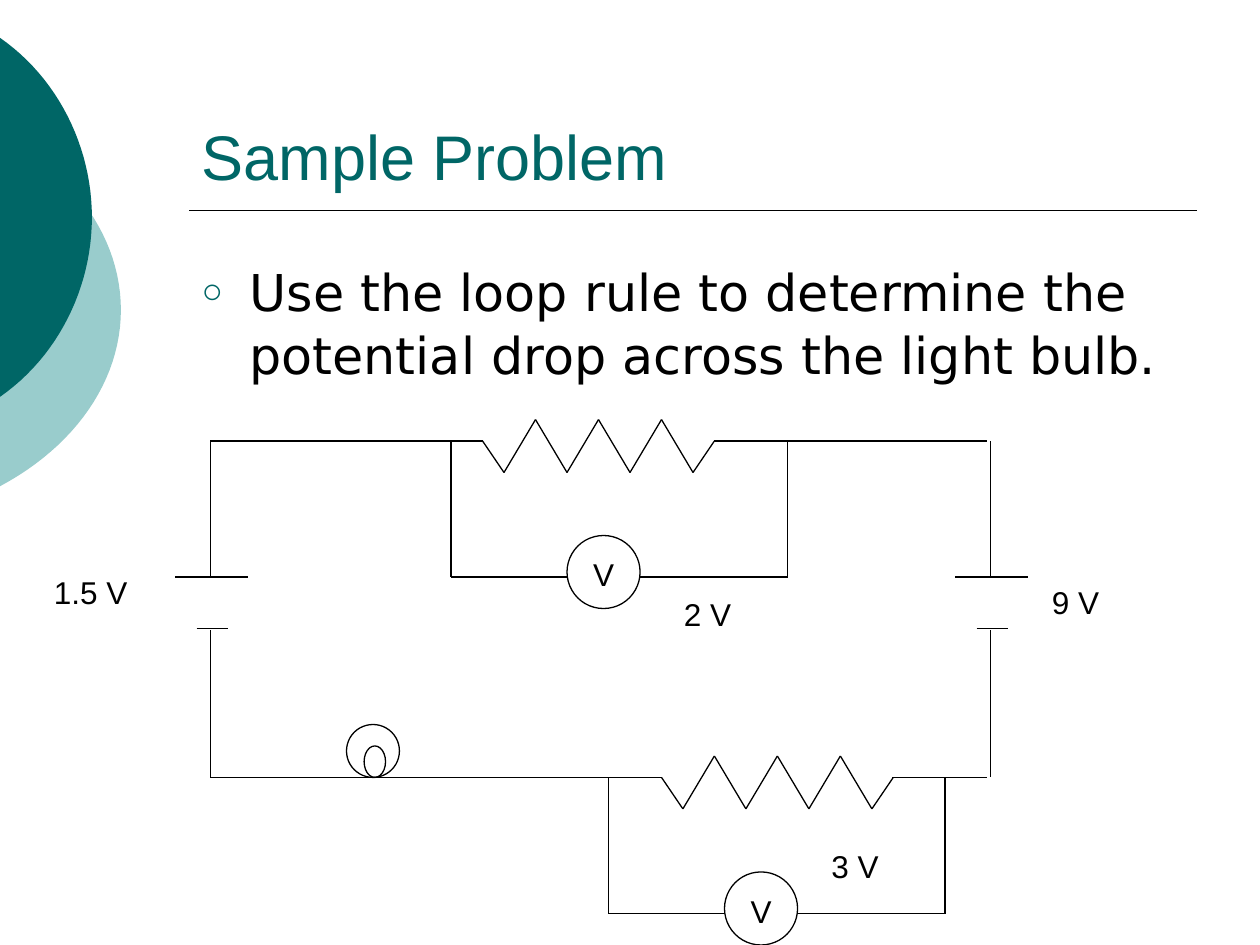
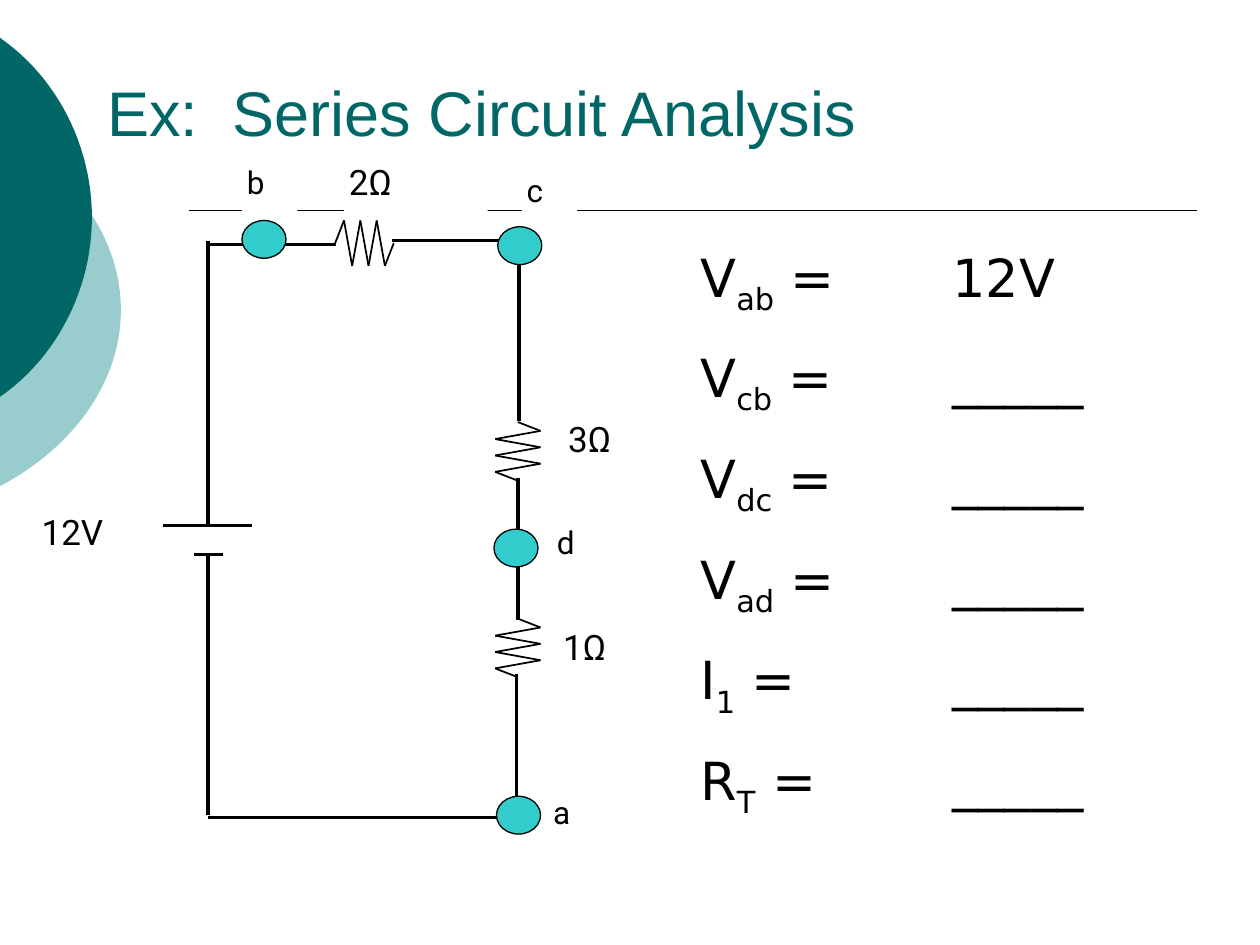
from dataclasses import dataclass

import pptx
import pptx.util
from pptx.dml.color import RGBColor
from pptx.enum.shapes import MSO_CONNECTOR, MSO_SHAPE
from pptx.enum.text import MSO_ANCHOR, MSO_AUTO_SIZE, PP_ALIGN
from pptx.oxml.ns import qn
from lxml import etree
from pptx.util import Inches, Pt

TEAL, PALE_TEAL, NODE_TEAL = "006666", "99CCCC", "33CCCC"
BLACK, WHITE = "000000", "FFFFFF"
TITLE_FONT = {"name": "Arial", "size": Pt(36)}
BODY_FONT = {"name": "DejaVu Sans", "size": Pt(29)}
EQUATION_FONT = {"name": "DejaVu Sans", "size": Pt(30)}
METER_FONT = {"name": "Arial", "size": Pt(18)}
VALUE_FONT = {"name": "Roboto", "size": Pt(20)}
NODE_FONT = {"name": "Roboto", "size": Pt(18)}
SMALL_INSETS = {f"margin_{side}": Inches(0.04)
                for side in ("left", "top", "right", "bottom")}


def color(hex_string):
    return RGBColor.from_string(hex_string)


def set_values(target, values):
    for name, value in values.items():
        setattr(target, name, value)


def format_font(font, values, hex_string=BLACK):
    set_values(font, values)
    font.color.rgb = color(hex_string)


def place(shape, left, top, width, height):
    set_values(shape, {"left": Inches(left), "top": Inches(top),
                       "width": Inches(width), "height": Inches(height)})


@dataclass
class Panel:
    """A region of a slide; all positions are inches from its top left corner."""
    slide: object
    left: float = 0
    top: float = 0

    def box(self, left, top, width, height):
        return [Inches(value) for value in
                (self.left + left, self.top + top, width, height)]

    def wire(self, *points, weight=0.75):
        for (x1, y1), (x2, y2) in zip(points, points[1:]):
            connector = self.slide.shapes.add_connector(
                MSO_CONNECTOR.STRAIGHT,
                Inches(self.left + x1), Inches(self.top + y1),
                Inches(self.left + x2), Inches(self.top + y2))
            connector.line.color.rgb = color(BLACK)
            connector.line.width = Pt(weight)
            etree.SubElement(connector._element.spPr, qn("a:effectLst"))

    def ellipse(self, left, top, width, height, fill=None):
        shape = self.slide.shapes.add_shape(
            MSO_SHAPE.OVAL, *self.box(left, top, width, height))
        shape.shadow.inherit = False
        if fill:
            shape.fill.solid()
            shape.fill.fore_color.rgb = color(fill)
        else:
            shape.fill.background()
        shape.line.color.rgb = color(BLACK)
        shape.line.width = Pt(0.75)

    def label(self, text, left, top, width, height, font, masked=False):
        text_box = self.slide.shapes.add_textbox(*self.box(left, top, width, height))
        frame = text_box.text_frame
        frame.word_wrap = True
        if masked:
            text_box.fill.solid()
            text_box.fill.fore_color.rgb = color(WHITE)
            set_values(frame, SMALL_INSETS)
        run = frame.paragraphs[0].add_run()
        run.text = text
        format_font(run.font, font)


def zigzag(x, y, lead, step, swings, peaks, vertical=False):
    """Points of a resistor: a short lead, alternating peaks, a short lead."""
    points = [(0, 0)]
    points += [(lead + step * i, swings[i % 2]) for i in range(peaks)]
    points.append((2 * lead + step * (peaks - 1), 0))
    if vertical:
        points = [(across, along) for along, across in points]
    return [(x + dx, y + dy) for dx, dy in points]


# Shared slide parts
def add_disc_edge(slide, top, bottom, reach, bend, fill):
    """Right part of a disc cut off by the slide's left edge."""
    middle = (top + bottom) / 2
    controls = [(0, top), (bend[0], top + bend[1]),
                (reach, middle - bend[2]), (reach, middle)]
    upper = []
    for i in range(25):
        t = i / 24
        weights = ((1 - t) ** 3, 3 * t * (1 - t) ** 2, 3 * t ** 2 * (1 - t), t ** 3)
        upper.append(tuple(sum(w * point[axis] for w, point in zip(weights, controls))
                           for axis in (0, 1)))
    lower = [(x, top + bottom - y) for x, y in reversed(upper[:-1])]
    outline = [(Inches(x), Inches(y)) for x, y in upper + lower]
    builder = slide.shapes.build_freeform(*outline[0], scale=1.0)
    builder.add_line_segments(outline[1:], close=True)
    disc = builder.convert_to_shape()
    disc.shadow.inherit = False
    disc.fill.solid()
    disc.fill.fore_color.rgb = color(fill)
    disc.line.fill.background()


def add_base_slide(presentation, layout_name, title, title_box):
    layout = presentation.slide_layouts.get_by_name(layout_name)
    slide = presentation.slides.add_slide(layout)
    add_disc_edge(slide, 1.06, 3.86, 0.96, (0.6, 0.32, 0.56), PALE_TEAL)
    add_disc_edge(slide, 0.3, 3.15, 0.73, (0.46, 0.32, 0.56), TEAL)
    Panel(slide).wire((1.5, 1.67), (9.5, 1.67), weight=1)
    place(slide.shapes.title, *title_box)
    frame = slide.shapes.title.text_frame
    frame.text = title
    set_values(frame, {"vertical_anchor": MSO_ANCHOR.BOTTOM, "word_wrap": True,
                       "auto_size": MSO_AUTO_SIZE.NONE})
    frame.paragraphs[0].alignment = PP_ALIGN.LEFT
    format_font(frame.paragraphs[0].runs[0].font, TITLE_FONT, TEAL)
    return slide


# Sample problem
def add_bullet(placeholder, text):
    place(placeholder, 1.5, 2, 8, 4.5)
    frame = placeholder.text_frame
    frame.text = text
    frame.auto_size = MSO_AUTO_SIZE.NONE
    paragraph = frame.paragraphs[0]
    set_values(paragraph, {"line_spacing": 1.04, "space_before": Pt(6)})
    format_font(paragraph.runs[0].font, BODY_FONT)
    properties = paragraph._p.get_or_add_pPr()
    properties.set("marL", str(Inches(0.38)))
    properties.set("indent", str(-Inches(0.38)))
    bullet_color = etree.SubElement(properties, qn("a:buClr"))
    etree.SubElement(bullet_color, qn("a:srgbClr"), val=TEAL)
    etree.SubElement(properties, qn("a:buSzPct"), val="70000")
    etree.SubElement(properties, qn("a:buChar"), char="○")


def add_battery(panel, x):
    panel.wire((x, 0), (x, 1.08))
    panel.wire((x - 0.28, 1.08), (x + 0.3, 1.08))
    panel.wire((x - 0.11, 1.49), (x + 0.14, 1.49))
    panel.wire((x, 1.5), (x, 2.67))


def add_metered_resistor(panel, x, y, resistor_offset):
    panel.wire(*zigzag(x + resistor_offset, y, 0.17, 0.25, (0.25, -0.17), 7))
    panel.wire((x, y), (x, y + 1.08), (x + 0.92, y + 1.08))
    panel.wire((x + 1.5, y + 1.08), (x + 2.67, y + 1.08), (x + 2.67, y))
    panel.ellipse(x + 0.92, y + 0.75, 0.58, 0.58)
    panel.label("V", x + 1.03, y + 0.86, 0.42, 0.4, METER_FONT)


def add_loop_circuit(panel):
    # Rails between the parts
    for start, end, y in ((0, 2.16, 0), (4, 6.16, 0),
                          (0, 3.58, 2.67), (5.41, 6.16, 2.67)):
        panel.wire((start, y), (end, y))
    for x in (0, 6.19):
        add_battery(panel, x)
    add_metered_resistor(panel, 1.91, 0, 0.25)
    add_metered_resistor(panel, 3.16, 2.67, 0.42)
    # Light bulb
    panel.ellipse(1.08, 2.25, 0.42, 0.42)
    panel.ellipse(1.22, 2.42, 0.17, 0.25)
    for text, x, y in (("1.5 V", -1.34, 1), ("9 V", 6.58, 1.08),
                       ("2 V", 3.66, 1.17), ("3 V", 4.83, 3.17)):
        panel.label(text, x, y, 0.92, 0.4, METER_FONT)


def add_sample_problem(presentation):
    slide = add_base_slide(presentation, "Title and Content", "Sample Problem",
                           (1.5, 0.33, 8, 1.25))
    add_bullet(slide.placeholders[1],
               "Use the loop rule to determine the potential drop across the light bulb.")
    add_loop_circuit(Panel(slide, 1.67, 3.5))


# Series circuit analysis
def add_series_circuit(panel):
    # Masking labels lie beneath the wires
    for text, *box in (("3Ω", 2.82, 1.36, 1, 0.46), ("1Ω", 2.78, 3.01, 1.14, 0.52),
                       ("12V", -1.36, 2.1, 0.92, 0.52), ("2Ω", 1.08, -0.68, 1.14, 0.52)):
        panel.label(text, *box, VALUE_FONT, masked=True)
    for text, x, y in (("b", 0.27, -0.66), ("c", 2.49, -0.59),
                       ("d", 2.73, 2.2), ("a", 2.7, 4.34)):
        panel.label(text, x, y, 0.44, 0.47, NODE_FONT, masked=True)
    # Wires and battery plates
    for x, start, end in ((0, 0, 2.25), (0, 2.49, 4.56), (2.47, 0, 1.43),
                          (2.46, 1.88, 3.01), (2.45, 3.44, 4.56)):
        panel.wire((x, start), (x, end), weight=2)
    for y, start, end in ((0.03, 0, 1.02), (0, 1.46, 2.48), (4.58, 0, 2.46),
                          (2.26, -0.36, 0.35), (2.49, -0.11, 0.12)):
        panel.wire((start, y), (end, y), weight=2)
    # Resistors
    panel.wire(*zigzag(1.01, 0.02, 0.07, 0.065, (-0.18, 0.18), 6), weight=1)
    for y in (1.44, 3):
        panel.wire(*zigzag(2.46, y, 0.07, 0.065, (0.18, -0.18), 6, vertical=True),
                   weight=1)
    # Nodes b, c, d, a
    for x, y in ((0.27, -0.16), (2.3, -0.11), (2.27, 2.29), (2.29, 4.41)):
        panel.ellipse(x, y, 0.35, 0.3, NODE_TEAL)


def add_equations(panel):
    blank = "_____"
    equations = (("V", "ab", " = \t12V"), ("V", "cb", f" = \t{blank}"),
                 ("V", "dc", f" = \t{blank}"), ("V", "ad", f" = \t{blank}"),
                 ("I", "1", f" = \t\t{blank}"), ("R", "T", f" =\t\t{blank}"))
    text_box = panel.slide.shapes.add_textbox(*panel.box(0, 0, 3.65, 4.35))
    frame = text_box.text_frame
    frame.word_wrap = True
    for index, parts in enumerate(equations):
        paragraph = frame.add_paragraph() if index else frame.paragraphs[0]
        set_values(paragraph, {"line_spacing": 1.04, "space_before": Pt(15)})
        tabs = etree.SubElement(paragraph._p.get_or_add_pPr(), qn("a:tabLst"))
        for position in (1, 2):
            etree.SubElement(tabs, qn("a:tab"), pos=str(Inches(position)), algn="l")
        for part_index, text in enumerate(parts):
            run = paragraph.add_run()
            run.text = text
            format_font(run.font, EQUATION_FONT)
            if part_index == 1:
                run.font._element.set("baseline", "-25000")


def add_series_analysis(presentation):
    slide = add_base_slide(presentation, "Title Only", "Ex:  Series Circuit Analysis",
                           (0.75, 0.4, 8.5, 0.83))
    add_equations(Panel(slide, 5.46, 1.87))
    add_series_circuit(Panel(slide, 1.65, 1.91))


def main():
    presentation = pptx.Presentation()
    set_values(presentation, {"slide_width": Inches(10), "slide_height": Inches(7.5)})
    add_sample_problem(presentation)
    add_series_analysis(presentation)
    presentation.save("out.pptx")


if __name__ == "__main__":
    main()
